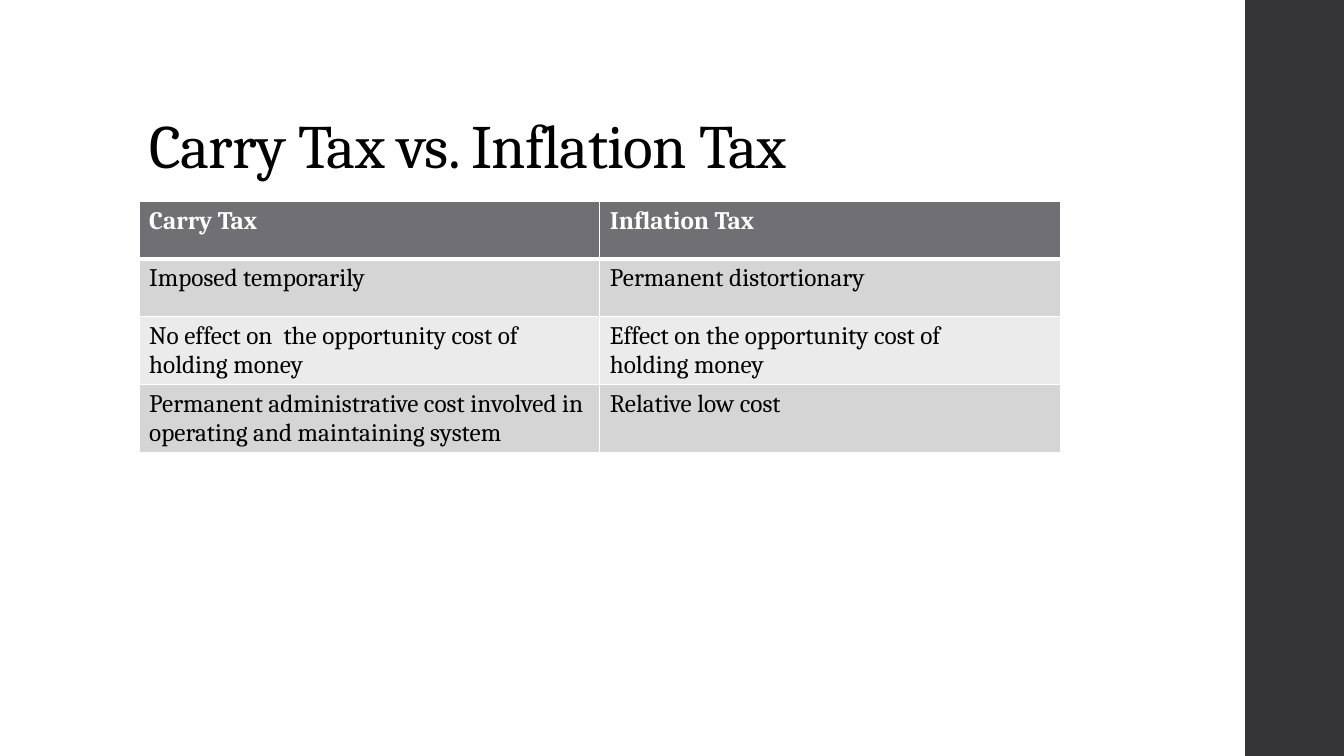
from dataclasses import dataclass

from lxml import etree
from pptx import Presentation
from pptx.dml.color import RGBColor
from pptx.enum.shapes import MSO_SHAPE
from pptx.enum.text import MSO_ANCHOR, MSO_AUTO_SIZE, PP_ALIGN
from pptx.oxml.ns import qn
from pptx.util import Inches, Pt

RECTANGLE = MSO_SHAPE.RECTANGLE
BOTTOM = MSO_ANCHOR.BOTTOM
NO_AUTOFIT = MSO_AUTO_SIZE.NONE
LEFT = PP_ALIGN.LEFT


@dataclass(frozen=True)
class Theme:
    font: str = "Cambria"
    title_size: int = 44
    table_size: int = 18
    text: str = "000000"
    white: str = "FFFFFF"
    sidebar: str = "353537"
    header: str = "6F6F74"
    bands: tuple = ("D5D5D6", "EBEBEB")


THEME = Theme()


def style_paragraph(p, size, color, bold=False):
    p.alignment = LEFT
    p.font.name = THEME.font
    p.font.size = Pt(size)
    p.font.bold = bold
    p.font.color.rgb = RGBColor.from_string(color)


def add_borders(cell, bottom_width):
    """Give the cell white edges; must run before its fill is set."""
    tc_pr = cell._tc.get_or_add_tcPr()
    for tag, width in (("a:lnL", 1), ("a:lnR", 1), ("a:lnT", 1), ("a:lnB", bottom_width)):
        line = etree.SubElement(tc_pr, qn(tag), w=str(Pt(width)))
        fill = etree.SubElement(line, qn("a:solidFill"))
        etree.SubElement(fill, qn("a:srgbClr"), val=THEME.white)


prs = Presentation()
prs.slide_width, prs.slide_height = Inches(13.33), Inches(7.5)
slide = prs.slides.add_slide(prs.slide_layouts[5])

# Sidebar
sidebar = slide.shapes.add_shape(RECTANGLE, Inches(12.35), 0, Inches(0.98), prs.slide_height)
sidebar.shadow.inherit = False
sidebar.fill.solid()
sidebar.fill.fore_color.rgb = RGBColor.from_string(THEME.sidebar)
sidebar.line.fill.background()

# Title
title = slide.shapes.title
title.left, title.top = Inches(1.38), Inches(0.4)
title.width, title.height = Inches(10.6), Inches(1.45)
tf = title.text_frame
tf.text = "Carry Tax vs. Inflation Tax"
tf.word_wrap = True
tf.auto_size = NO_AUTOFIT
tf.vertical_anchor = BOTTOM
p = tf.paragraphs[0]
style_paragraph(p, THEME.title_size, THEME.text)
p.line_spacing = 0.9
p.runs[0].font._element.set("spc", "-50")

# Comparison table
ROWS = [
    ("Carry Tax", "Inflation Tax"),
    ("Imposed temporarily", "Permanent distortionary"),
    ("No effect on  the opportunity cost of holding money",
     "Effect on the opportunity cost of\nholding money"),
    ("Permanent administrative cost involved in operating and maintaining system",
     "Relative low cost"),
]
ROW_HEIGHT = 0.57
table = slide.shapes.add_table(len(ROWS), 2, Inches(1.38), Inches(2),
                               Inches(9.14), Inches(ROW_HEIGHT * len(ROWS))).table
for r, row in enumerate(ROWS):
    is_header = r == 0
    fill_color = THEME.header if is_header else THEME.bands[(r - 1) % 2]
    text_color = THEME.white if is_header else THEME.text
    for c, text in enumerate(row):
        cell = table.cell(r, c)
        add_borders(cell, 3 if is_header else 1)
        cell.fill.solid()
        cell.fill.fore_color.rgb = RGBColor.from_string(fill_color)
        cell.text_frame.text = text
        for p in cell.text_frame.paragraphs:
            style_paragraph(p, THEME.table_size, text_color, bold=is_header)

prs.save("out.pptx")
